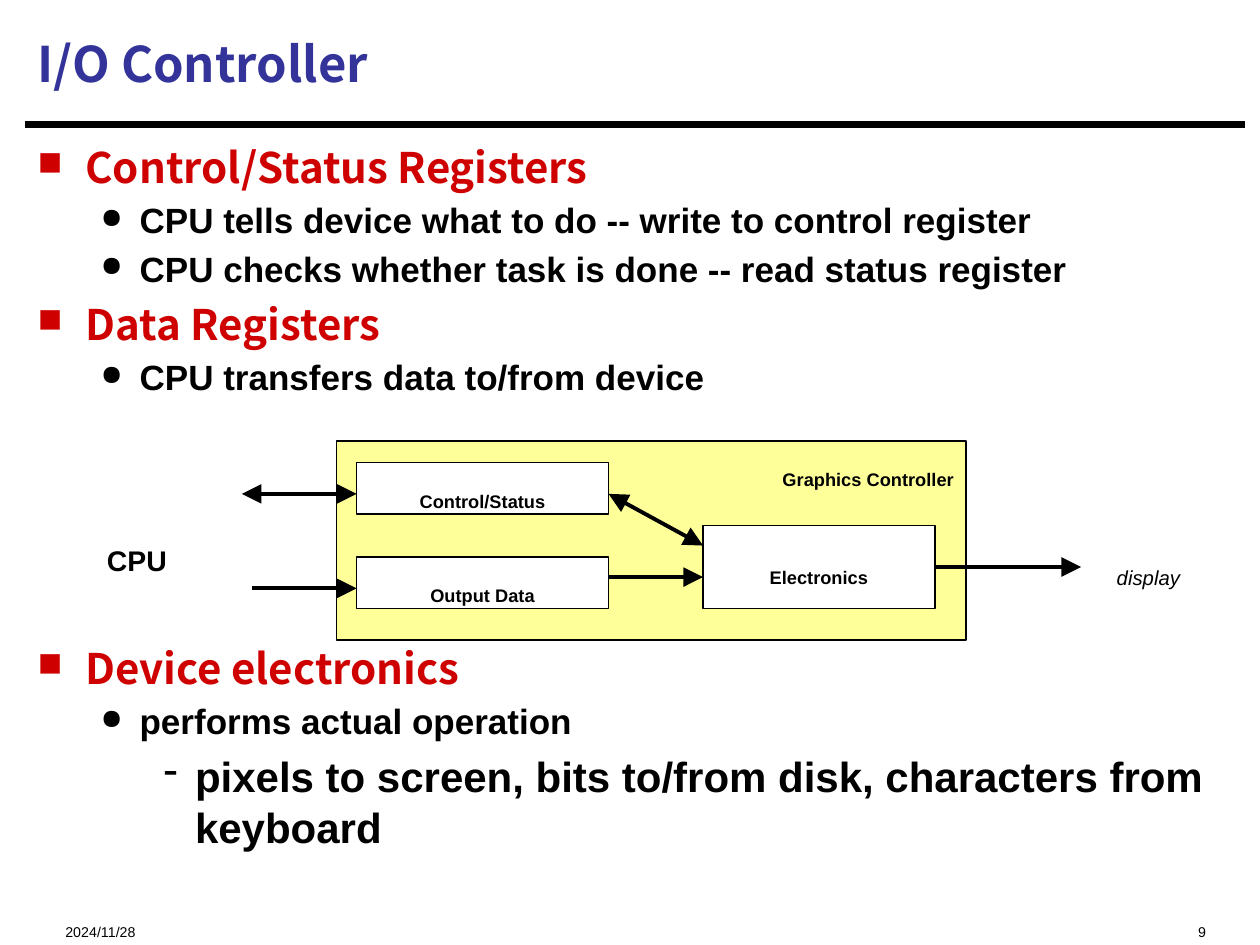
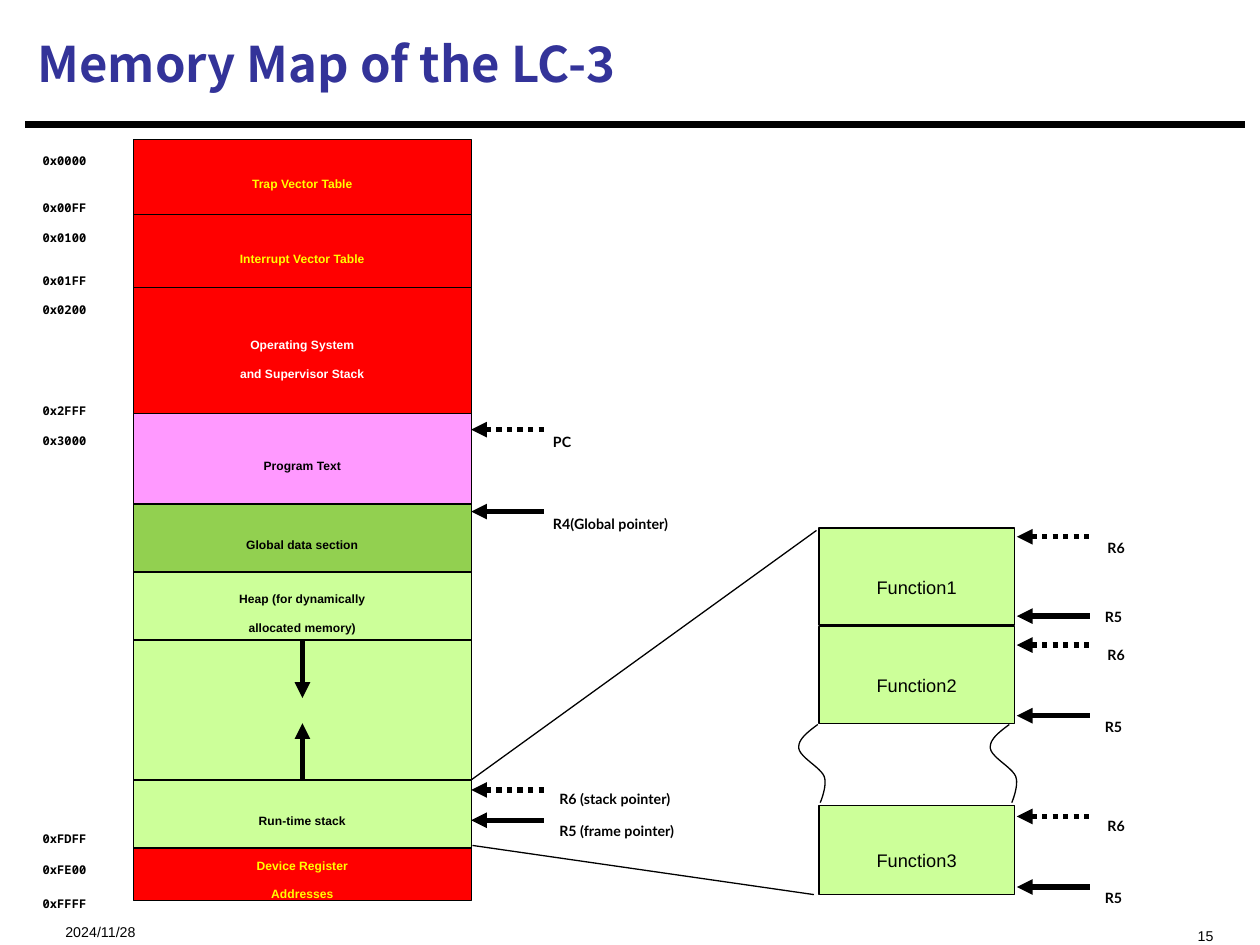
from dataclasses import dataclass

import lxml.etree
import pptx
import pptx.dml.color
import pptx.enum.dml
import pptx.enum.shapes
import pptx.enum.text
import pptx.oxml.ns
import pptx.presentation
import pptx.shapes.autoshape
import pptx.shapes.connector
import pptx.slide
import pptx.text.text
import pptx.util

Inches = pptx.util.Inches
Pt = pptx.util.Pt
Align = pptx.enum.text.PP_ALIGN
Anchor = pptx.enum.text.MSO_ANCHOR
Point = tuple[float, float]


@dataclass(frozen=True)
class Theme:
    black: str = "000000"
    white: str = "FFFFFF"
    title: str = "333399"
    heading: str = "CE0000"
    controller: str = "FFFF99"
    system: str = "FF0000"
    system_text: str = "FFFF00"
    program: str = "FF99FF"
    global_data: str = "92D050"
    stack: str = "CCFF99"
    heading_font: str = "Noto Sans CJK SC"
    text_font: str = "Arial"
    register_font: str = "Lato"
    address_font: str = "Noto Sans Mono"
    title_size: int = 28
    heading_size: int = 24
    point_size: int = 20
    diagram_size: int = 18
    register_size: int = 14
    address_size: int = 12
    subscript: str = "-25000"


THEME = Theme()


@dataclass(frozen=True)
class Style:
    size: float
    font: str = THEME.text_font
    color: str = THEME.black
    bold: bool = True
    italic: bool = False
    subscript: bool = True


TITLE = Style(THEME.title_size, THEME.heading_font, THEME.title, subscript=False)
FOOTER = Style(THEME.register_size, bold=False)
CPU = Style(THEME.title_size)
DISPLAY = Style(THEME.point_size, bold=False, italic=True)
DIAGRAM = Style(THEME.diagram_size)
FUNCTION = Style(THEME.diagram_size, bold=False)
REGISTER = Style(THEME.register_size, THEME.register_font)
ADDRESS = Style(THEME.address_size, THEME.address_font)
REGION = Style(THEME.address_size)
REGION_SYSTEM = Style(THEME.address_size, color=THEME.system_text)
REGION_SUPERVISOR = Style(THEME.address_size, color=THEME.white)


@dataclass(frozen=True)
class Box:
    left: float
    top: float
    width: float
    height: float
    lines: tuple[str, ...] = ()
    style: Style = DIAGRAM
    fill: str = THEME.white
    line_width: float = 0.75
    anchor: Anchor = Anchor.MIDDLE


@dataclass(frozen=True)
class Level:
    style: Style
    bullet: str
    bullet_percent: int
    indent: float
    hanging: float
    space_before: float
    line_spacing: float = 1.0


HEADING = Level(Style(THEME.heading_size, THEME.heading_font, THEME.heading, subscript=False),
                "■", 80, 0.38, 0.38, 8.6, 0.9)
POINT = Level(Style(THEME.point_size, subscript=False), "●", 80, 0.81, 0.31, 3.6)
DETAIL = Level(Style(THEME.heading_size, subscript=False), "-", 100, 1.25, 0.25, 5)


@dataclass(frozen=True)
class Bullet:
    level: Level
    text: str
    space_before: float | None = None


@dataclass(frozen=True)
class Pointer:
    """A register label whose arrow points left at a memory block."""
    text: str
    tip: float
    arrow_y: float
    label_left: float
    label_top: float
    dotted: bool = False


def rgb(color: str) -> pptx.dml.color.RGBColor:
    return pptx.dml.color.RGBColor.from_string(color)


def add_run(paragraph: pptx.text.text._Paragraph, text: str, style: Style) -> None:
    run = paragraph.add_run()
    run.text = text
    run.font.size = Pt(style.size)
    run.font.name = style.font
    run.font.bold = style.bold
    run.font.italic = style.italic
    run.font.color.rgb = rgb(style.color)
    if style.subscript:
        run._r.get_or_add_rPr().set("baseline", THEME.subscript)


def write_lines(frame: pptx.text.text.TextFrame, lines: tuple[str, ...],
                style: Style, alignment: Align) -> None:
    frame.word_wrap = True
    for index, text in enumerate(lines):
        paragraph = frame.add_paragraph() if index else frame.paragraphs[0]
        paragraph.alignment = alignment
        add_run(paragraph, text, style)


def add_label(slide: pptx.slide.Slide, text: str, left: float, top: float, width: float,
              height: float, style: Style, alignment: Align = Align.LEFT) -> None:
    shape = slide.shapes.add_textbox(Inches(left), Inches(top), Inches(width), Inches(height))
    write_lines(shape.text_frame, (text,), style, alignment)


def add_box(slide: pptx.slide.Slide, box: Box) -> pptx.shapes.autoshape.Shape:
    shape = slide.shapes.add_shape(
        pptx.enum.shapes.MSO_SHAPE.RECTANGLE, Inches(box.left), Inches(box.top),
        Inches(box.width), Inches(box.height))
    shape.shadow.inherit = False
    shape.fill.solid()
    shape.fill.fore_color.rgb = rgb(box.fill)
    shape.line.color.rgb = rgb(THEME.black)
    shape.line.width = Pt(box.line_width)
    shape.text_frame.vertical_anchor = box.anchor
    write_lines(shape.text_frame, box.lines, box.style, Align.CENTER)
    return shape


def add_line(slide: pptx.slide.Slide, start: Point, end: Point, width: float, head: bool = False,
             tail: bool = False, dotted: bool = False,
             arrow_size: str = "med") -> pptx.shapes.connector.Connector:
    """Draw a line; head puts an arrowhead at start, tail at end."""
    connector = slide.shapes.add_connector(
        pptx.enum.shapes.MSO_CONNECTOR.STRAIGHT, *(Inches(value) for value in start + end))
    connector.line.color.rgb = rgb(THEME.black)
    connector.line.width = Pt(width)
    if dotted:
        connector.line.dash_style = pptx.enum.dml.MSO_LINE.ROUND_DOT
    outline = connector.line._get_or_add_ln()
    for tag, wanted in (("a:headEnd", head), ("a:tailEnd", tail)):
        if wanted:
            lxml.etree.SubElement(outline, pptx.oxml.ns.qn(tag), type="triangle",
                                  w=arrow_size, len=arrow_size)
    lxml.etree.SubElement(connector._element.spPr, pptx.oxml.ns.qn("a:effectLst"))
    return connector


def add_bullets(slide: pptx.slide.Slide, bullets: list[Bullet]) -> None:
    shape = slide.shapes.add_textbox(Inches(0.2), Inches(1.12), Inches(9.67), Inches(5.94))
    frame = shape.text_frame
    frame.word_wrap = True
    for index, bullet in enumerate(bullets):
        level = bullet.level
        paragraph = frame.add_paragraph() if index else frame.paragraphs[0]
        before = level.space_before if bullet.space_before is None else bullet.space_before
        paragraph.space_before = Pt(before)
        paragraph.line_spacing = level.line_spacing
        properties = paragraph._p.get_or_add_pPr()
        properties.set("marL", str(Inches(level.indent)))
        properties.set("indent", str(-Inches(level.hanging)))
        lxml.etree.SubElement(properties, pptx.oxml.ns.qn("a:buSzPct"),
                              val=str(level.bullet_percent * 1000))
        lxml.etree.SubElement(properties, pptx.oxml.ns.qn("a:buChar"), char=level.bullet)
        add_run(paragraph, bullet.text, level.style)


def add_pointer(slide: pptx.slide.Slide, pointer: Pointer) -> None:
    add_line(slide, (pointer.tip, pointer.arrow_y), (pointer.tip + 0.58, pointer.arrow_y),
             3, head=True, dotted=pointer.dotted)
    add_label(slide, pointer.text, pointer.label_left, pointer.label_top, 1.75, 0.34, REGISTER)


def add_break_curve(slide: pptx.slide.Slide, left: float) -> None:
    """Draw the wavy edge that stands for omitted stack frames."""
    top, steps = 5.75, 12
    curves = [((0, 0), (-0.08, 0.06), (-0.16, 0.12), (-0.15, 0.19)),
              ((-0.15, 0.19), (-0.14, 0.26), (0.02, 0.34), (0.05, 0.41)),
              ((0.05, 0.41), (0.08, 0.48), (0.02, 0.62), (0.02, 0.62))]
    points = []
    for curve in curves:
        for step in range(1, steps + 1):
            t = step / steps
            weights = ((1 - t) ** 3, 3 * t * (1 - t) ** 2, 3 * t ** 2 * (1 - t), t ** 3)
            x, y = (sum(w * p[axis] for w, p in zip(weights, curve)) for axis in (0, 1))
            points.append((Inches(left + x), Inches(top + y)))
    builder = slide.shapes.build_freeform(Inches(left), Inches(top))
    builder.add_line_segments(points, close=False)
    shape = builder.convert_to_shape()
    shape.shadow.inherit = False
    shape.fill.background()
    shape.line.color.rgb = rgb(THEME.black)
    shape.line.width = Pt(0.75)


def add_titled_slide(presentation: pptx.presentation.Presentation, title: str, number: str,
                     number_left: float, number_top: float) -> pptx.slide.Slide:
    slide = presentation.slides.add_slide(presentation.slide_layouts[5])
    add_line(slide, (0.2, 0.99), (9.88, 0.99), 3.75)
    shape = slide.shapes.title
    shape.left, shape.top = Inches(0.2), Inches(0.08)
    shape.width, shape.height = Inches(9.67), Inches(0.84)
    shape.text_frame.vertical_anchor = Anchor.MIDDLE
    write_lines(shape.text_frame, (title,), TITLE, Align.LEFT)
    add_label(slide, "2024/11/28", 0.42, 7.15, 2.5, 0.27, FOOTER)
    add_label(slide, number, number_left, number_top, 3, 0.27, FOOTER, Align.RIGHT)
    return slide


def build_controller_slide(presentation: pptx.presentation.Presentation) -> None:
    slide = add_titled_slide(presentation, "I/O Controller", "9", 6.67, 7.15)
    add_bullets(slide, [
        Bullet(HEADING, "Control/Status Registers", 0),
        Bullet(POINT, "CPU tells device what to do -- write to control register"),
        Bullet(POINT, "CPU checks whether task is done -- read status register"),
        Bullet(HEADING, "Data Registers"),
        Bullet(POINT, "CPU transfers data to/from device"),
        Bullet(HEADING, "Device electronics", 143),
        Bullet(POINT, "performs actual operation"),
        Bullet(DETAIL, "pixels to screen, bits to/from disk, characters from keyboard"),
    ])
    add_box(slide, Box(2.67, 3.5, 5, 1.58, fill=THEME.controller, line_width=1))
    add_label(slide, "Graphics Controller", 4.92, 3.5, 2.75, 0.4, DIAGRAM, Align.RIGHT)
    for text, top in (("Control/Status", 3.67), ("Output Data", 4.42)):
        add_box(slide, Box(2.83, top, 2, 0.41, (text,), line_width=1, anchor=Anchor.TOP))
    electronics = add_box(slide, Box(5.58, 4.17, 1.84, 0.66, ("Electronics",), line_width=1))
    to_display = add_line(slide, (7.42, 4.5), (8.58, 4.5), 2.25, tail=True, arrow_size="lg")
    to_display.begin_connect(electronics, 3)
    for start, end, both_ways in (
        ((2, 4.67), (2.83, 4.67), False), ((1.92, 3.92), (2.83, 3.92), True),
        ((4.83, 4.58), (5.58, 4.58), False), ((4.83, 3.92), (5.58, 4.33), True),
    ):
        add_line(slide, start, end, 2.25, head=both_ways, tail=True, arrow_size="lg")
    add_label(slide, "CPU", 0.75, 4, 1.02, 0.57, CPU)
    add_label(slide, "display", 8.58, 4.25, 1.07, 0.43, DISPLAY, Align.CENTER)


def build_memory_slide(presentation: pptx.presentation.Presentation) -> None:
    slide = add_titled_slide(presentation, "Memory Map of the LC-3", "15", 6.73, 7.18)
    regions = {}
    for name, top, height, lines, style, fill in (
        ("free", 5.03, 1.16, (), REGION, THEME.stack),
        ("device", 6.7, 0.45, ("Device Register", "Addresses"), REGION_SYSTEM, THEME.system),
        ("trap", 1.11, 0.59, ("Trap Vector Table",), REGION_SYSTEM, THEME.system),
        ("interrupt", 1.7, 0.59, ("Interrupt Vector Table",), REGION_SYSTEM, THEME.system),
        ("supervisor", 2.28, 1.03, ("Operating System", "and Supervisor Stack"),
         REGION_SUPERVISOR, THEME.system),
        ("stack", 6.19, 0.54, ("Run-time stack",), REGION, THEME.stack),
        ("program", 3.28, 0.72, ("Program Text",), REGION, THEME.program),
        ("global", 4, 0.54, ("Global data section",), REGION, THEME.global_data),
        ("heap", 4.54, 0.54, ("Heap (for dynamically", "allocated memory)"), REGION, THEME.stack),
    ):
        regions[name] = add_box(slide, Box(1.06, top, 2.68, height, lines, style, fill))
    for name, side, start_y, end_y in (("heap", 2, 5.08, 5.54), ("stack", 0, 6.19, 5.74)):
        growth = add_line(slide, (2.4, start_y), (2.4, end_y), 3, tail=True)
        growth.begin_connect(regions[name], side)
    for address, top in (
        ("0x0000", 1.06), ("0x00FF", 1.43), ("0x0100", 1.67), ("0x01FF", 2.01), ("0x0200", 2.24),
        ("0x2FFF", 3.04), ("0x3000", 3.28), ("0xFDFF", 6.44), ("0xFE00", 6.68), ("0xFFFF", 6.95),
    ):
        add_label(slide, address, 0.24, top, 0.81, 0.3, ADDRESS)
    for name, top, height in (("Function2", 4.97, 0.77), ("Function3", 6.39, 0.71),
                              ("Function1", 4.19, 0.77)):
        add_box(slide, Box(6.5, top, 1.55, height, (name,), FUNCTION, THEME.stack))
    pointers = [
        Pointer("PC", 3.74, 3.41, 4.29, 3.26, True),
        Pointer("R4(Global pointer)", 3.74, 4.06, 4.29, 3.91),
        Pointer("R6 (stack pointer)", 3.74, 6.27, 4.34, 6.09, True),
        Pointer("R5 (frame pointer)", 3.74, 6.51, 4.34, 6.35),
    ]
    for r6_arrow, r6_label, r5_arrow, r5_label in (
        (4.26, 4.1, 4.89, 4.65), (5.12, 4.95, 5.68, 5.52), (6.48, 6.31, 7.04, 6.88),
    ):
        pointers.append(Pointer("R6", 8.07, r6_arrow, 8.69, r6_label, True))
        pointers.append(Pointer("R5", 8.07, r5_arrow, 8.67, r5_label))
    for pointer in pointers:
        add_pointer(slide, pointer)
    for left in (6.49, 8.01):
        add_break_curve(slide, left)
    add_line(slide, (3.74, 6.19), (6.48, 4.21), 0.75)
    add_line(slide, (3.75, 6.71), (6.46, 7.1), 0.75)


presentation = pptx.Presentation()
presentation.slide_width, presentation.slide_height = Inches(10), Inches(7.5)
build_controller_slide(presentation)
build_memory_slide(presentation)
presentation.save("out.pptx")
